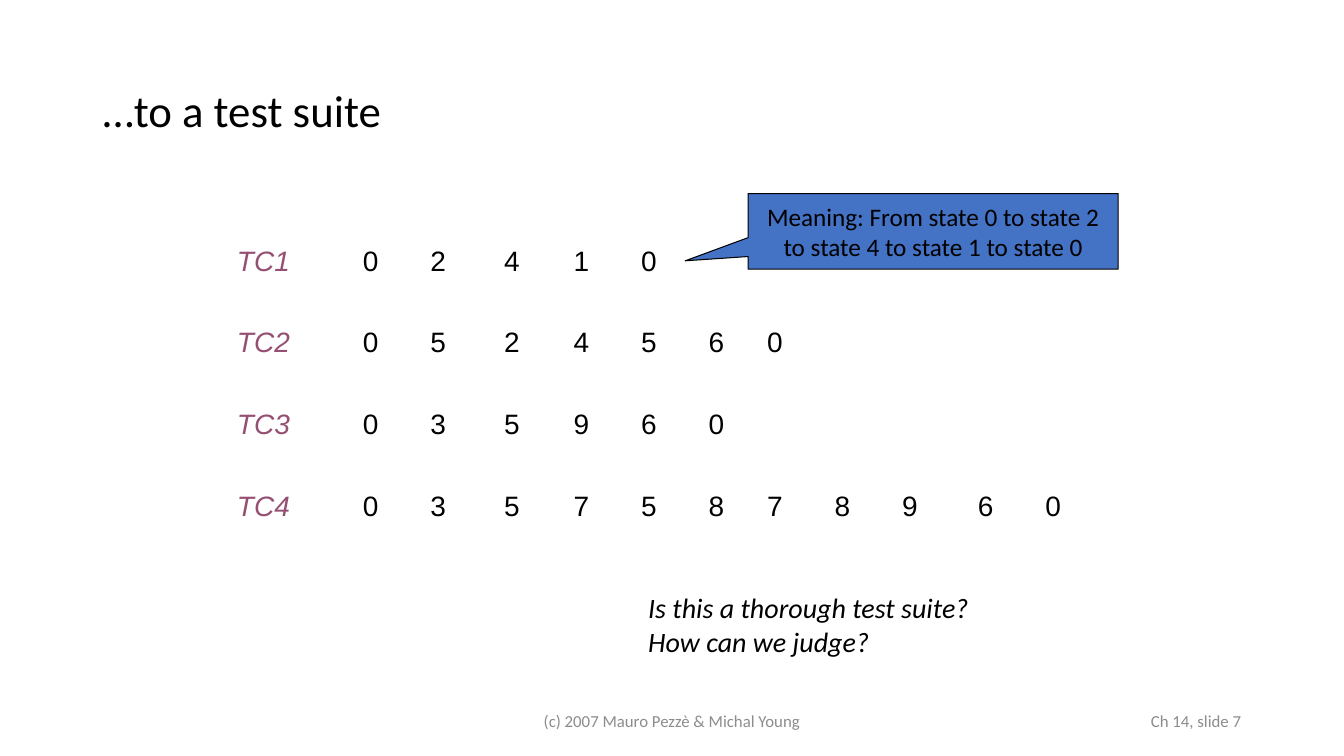
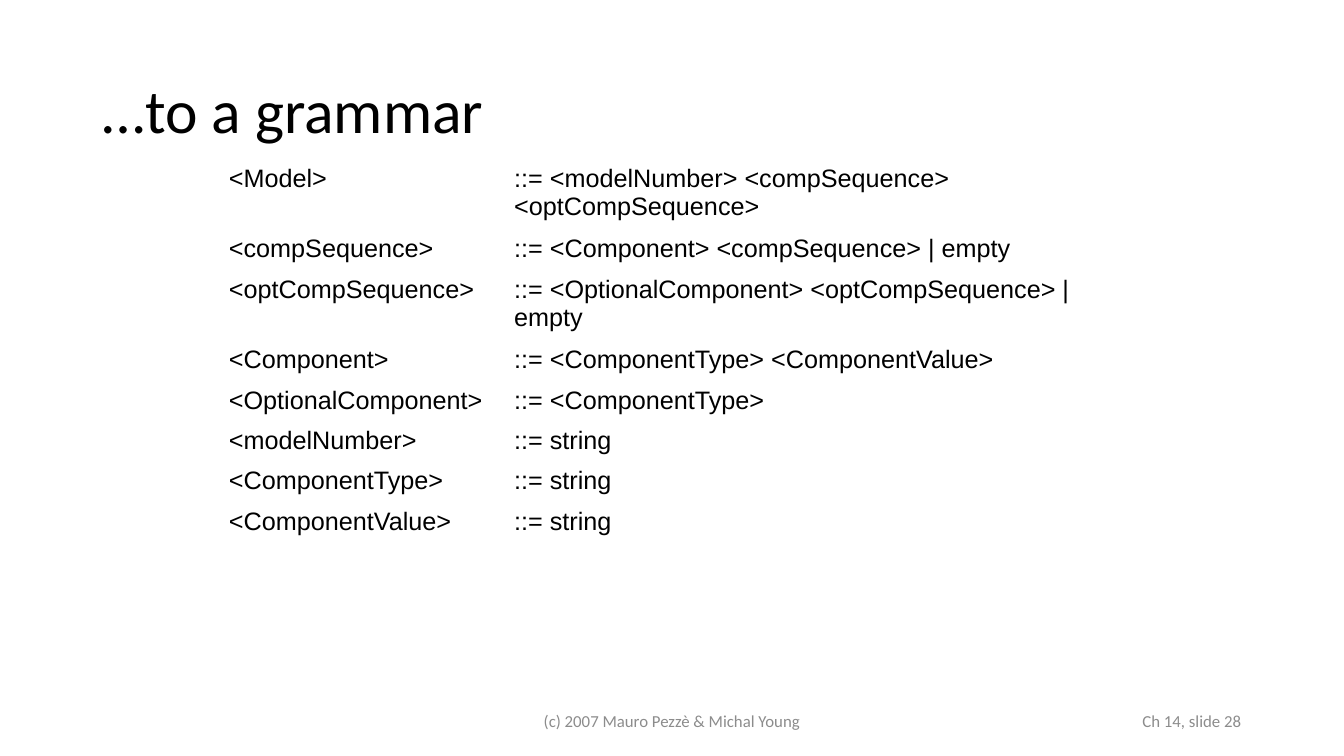
"""Builds two slides on deriving a test suite and a grammar from models."""
from pptx import Presentation
from pptx.dml.color import RGBColor
from pptx.enum.shapes import MSO_SHAPE
from pptx.enum.text import MSO_ANCHOR, PP_ALIGN
from pptx.util import Inches, Pt

LEFT, CENTER, RIGHT = PP_ALIGN.LEFT, PP_ALIGN.CENTER, PP_ALIGN.RIGHT
TOP, MIDDLE = MSO_ANCHOR.TOP, MSO_ANCHOR.MIDDLE
CALLOUT = MSO_SHAPE.RECTANGULAR_CALLOUT

BLACK = RGBColor(0x00, 0x00, 0x00)
GREY = RGBColor(0x8C, 0x8C, 0x8C)
PLUM = RGBColor(0x95, 0x4F, 0x72)
BLUE = RGBColor(0x44, 0x72, 0xC4)
HEADING_FONT, TABLE_FONT = "Calibri", "Arial"

SLIDE_W, SLIDE_H = 13.33, 7.5
MARGIN = 0.92
CONTENT_W = SLIDE_W - 2 * MARGIN
FOOTER_TOP, FOOTER_H = 6.95, 0.4
CREDIT_W, NUMBER_W = 4.5, 3

CREDIT = "(c) 2007 Mauro Pezzè & Michal Young"
TEST_CASES = [
    ("TC1", "02410"),
    ("TC2", "0524560"),
    ("TC3", "035960"),
    ("TC4", "03575878960"),
]
STATE_WIDTHS = [0.67, 0.73, 0.69, 0.67, 0.67, 0.58, 0.67, 0.67, 0.75, 0.67, 0.67]
MEANING = "Meaning: From state 0 to state 2 to state 4 to state 1 to state 0"
QUESTIONS = "Is this a thorough test suite?\nHow can we judge?"
GRAMMAR = [
    ("<Model>", "<modelNumber> <compSequence> <optCompSequence>"),
    ("<compSequence>", "<Component> <compSequence> | empty"),
    ("<optCompSequence>", "<OptionalComponent> <optCompSequence> | empty"),
    ("<Component>", "<ComponentType> <ComponentValue>"),
    ("<OptionalComponent>", "<ComponentType>"),
    ("<modelNumber>", "string"),
    ("<ComponentType>", "string"),
    ("<ComponentValue>", "string"),
]


def write(frame, text, size, color=BLACK, font=HEADING_FONT, align=LEFT, italic=False):
    """Fill a text frame and format all its runs."""
    frame.text = text
    for paragraph in frame.paragraphs:
        paragraph.alignment = align
        for run in paragraph.runs:
            run.font.name, run.font.size = font, Pt(size)
            run.font.color.rgb, run.font.italic = color, italic


def add_label(slide, box, text, size, anchor=TOP, **style):
    """Add a wrapped text box."""
    frame = slide.shapes.add_textbox(*map(Inches, box)).text_frame
    frame.word_wrap, frame.vertical_anchor = True, anchor
    write(frame, text, size, **style)


def add_grid(slide, left, top, widths, heights, rows, size, first_style):
    """Add an unfilled table; first_style formats its first column."""
    table = slide.shapes.add_table(
        len(rows), len(widths), Inches(left), Inches(top),
        Inches(sum(widths)), Inches(sum(heights))).table
    table.first_row = table.horz_banding = False
    for column, width in zip(table.columns, widths):
        column.width = Inches(width)
    for row, height, texts in zip(table.rows, heights, rows):
        row.height = Inches(height)
        for index, cell in enumerate(row.cells):
            cell.fill.background()
            text = texts[index] if index < len(texts) else ""
            style = first_style if index == 0 else {}
            write(cell.text_frame, text, size, font=TABLE_FONT, **style)
            if not text:
                cell.text_frame.paragraphs[0].font.size = Pt(size)


def add_page(prs, heading, heading_size, number):
    """Add a slide with the shared title and footers."""
    slide = prs.slides.add_slide(prs.slide_layouts[5])
    title = slide.shapes.title
    title.left, title.top = Inches(MARGIN), Inches(0.4)
    title.width, title.height = Inches(CONTENT_W), Inches(1.45)
    title.text_frame.vertical_anchor = MIDDLE
    write(title.text_frame, heading, heading_size)
    title.text_frame.paragraphs[0].line_spacing = 0.9

    footers = [
        ((SLIDE_W - CREDIT_W) / 2, CREDIT_W, CREDIT, CENTER),
        (SLIDE_W - MARGIN - NUMBER_W, NUMBER_W, f"Ch 14, slide {number}", RIGHT),
    ]
    for left, width, text, align in footers:
        add_label(slide, (left, FOOTER_TOP, width, FOOTER_H), text, 12,
                  anchor=MIDDLE, color=GREY, align=align)
    return slide


def add_test_suite(prs):
    """Build the slide listing the test cases."""
    slide = add_page(prs, "…to a test suite", 32, 7)
    rows = [[name, *states] for name, states in TEST_CASES]
    add_grid(slide, 2.25, 2.39, [1.25] + STATE_WIDTHS, [0.81] * 3 + [0.9], rows, 20,
             {"color": PLUM, "italic": True})

    meaning = slide.shapes.add_shape(CALLOUT, *map(Inches, (7.42, 1.92, 3.67, 0.75)))
    meaning.adjustments[0], meaning.adjustments[1] = -0.67, 0.39
    meaning.shadow.inherit = False
    meaning.fill.solid()
    meaning.fill.fore_color.rgb = BLUE
    meaning.line.color.rgb, meaning.line.width = BLACK, Pt(0.75)
    meaning.text_frame.word_wrap = True
    meaning.text_frame.vertical_anchor = MIDDLE
    write(meaning.text_frame, MEANING, 18, align=CENTER)

    add_label(slide, (6.33, 5.81, 3.75, 0.77), QUESTIONS, 20, italic=True)


def add_grammar(prs):
    """Build the slide listing the grammar rules."""
    slide = add_page(prs, "…to a grammar", 44, 28)
    rows = [(symbol, f"::= {rule}") for symbol, rule in GRAMMAR]
    add_grid(slide, 2.17, 1.58, [2.83, 6.33], [0.39] * len(rows), rows, 18, {})


def main():
    """Build and save the presentation."""
    prs = Presentation()
    prs.slide_width, prs.slide_height = Inches(SLIDE_W), Inches(SLIDE_H)
    add_test_suite(prs)
    add_grammar(prs)
    prs.save("out.pptx")


if __name__ == "__main__":
    main()
